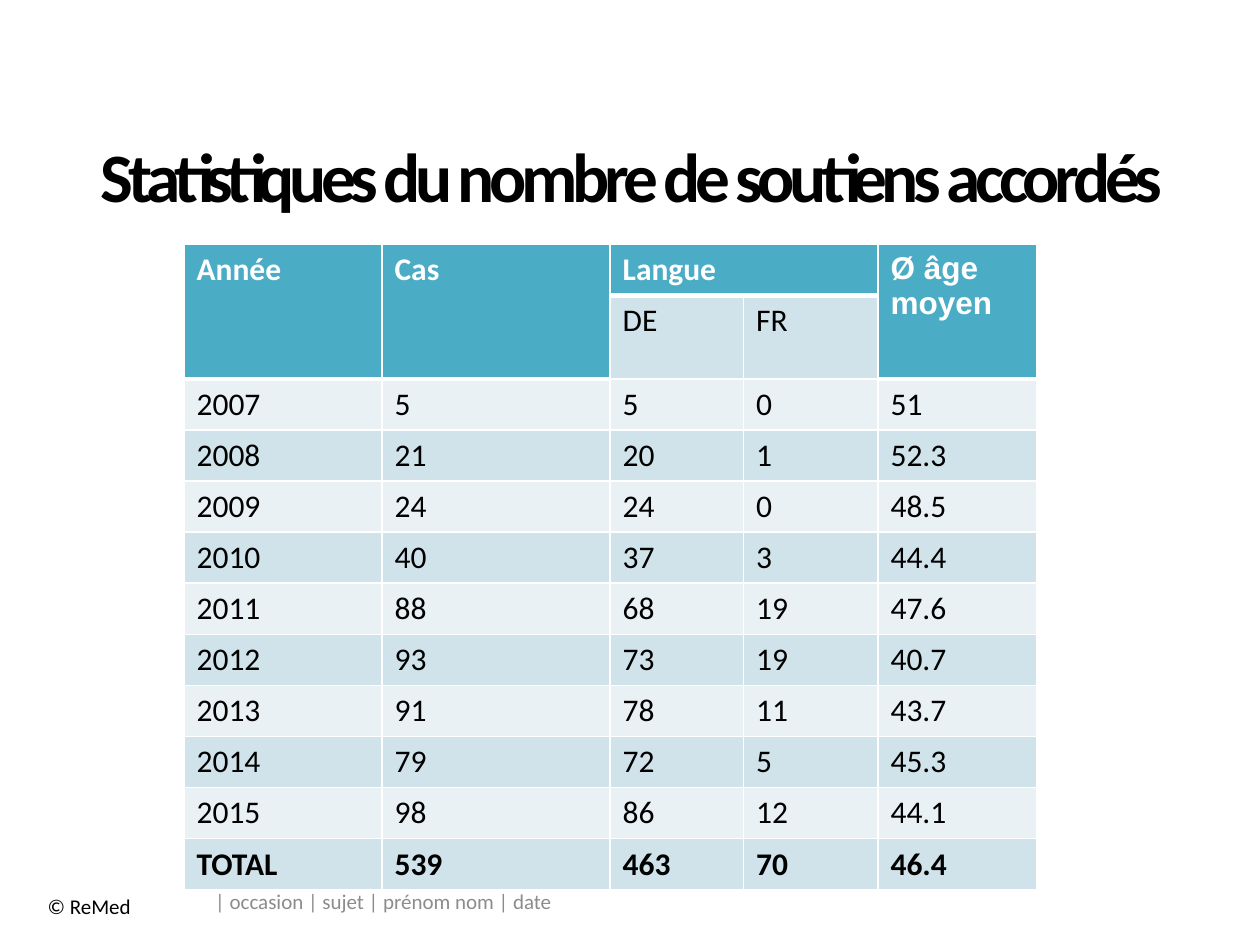
"""Builds the slide with yearly support statistics."""
from lxml.etree import SubElement
from pptx import Presentation
from pptx.dml.color import RGBColor
from pptx.enum.text import MSO_ANCHOR, MSO_AUTO_SIZE, PP_ALIGN
from pptx.oxml.ns import qn
from pptx.util import Cm, Pt

BLACK = RGBColor(0x00, 0x00, 0x00)
WHITE = RGBColor(0xFF, 0xFF, 0xFF)
GREY = RGBColor(0x8C, 0x8C, 0x8C)
TEAL = RGBColor(0x4B, 0xAC, 0xC6)
DARK = RGBColor(0xD0, 0xE3, 0xEA)
LIGHT = RGBColor(0xE9, 0xF1, 0xF5)

WIDTHS = (3.99, 4.6, 2.69, 2.71, 3.2)
HEIGHT = 1.03
ROWS = (
    ("Année", "Cas", "Langue", "", "Ø âge moyen"),
    ("", "", "DE", "FR", ""),
    ("2007", "5", "5", "0", "51"),
    ("2008", "21", "20", "1", "52.3"),
    ("2009", "24", "24", "0", "48.5"),
    ("2010", "40", "37", "3", "44.4"),
    ("2011", "88", "68", "19", "47.6"),
    ("2012", "93", "73", "19", "40.7"),
    ("2013", "91", "78", "11", "43.7"),
    ("2014", "79", "72", "5", "45.3"),
    ("2015", "98", "86", "12", "44.1"),
    ("TOTAL", "539", "463", "70", "46.4"),
)
MERGES = ((0, 0, 1, 0), (0, 1, 1, 1), (0, 2, 0, 3), (0, 4, 1, 4))


class Deck:
    """Holds the style and the current slide."""

    base = {"name": "Calibri", "size": Pt(18), "bold": False}

    def __init__(self):
        self.prs = Presentation()
        self.prs.slide_width, self.prs.slide_height = Cm(25.4), Cm(19.05)
        self.slide = self.prs.slides.add_slide(self.prs.slide_layouts[5])

    def put(self, frame, text, color=BLACK, **style):
        """Puts one formatted run into a text frame."""
        run = frame.paragraphs[0].add_run()
        run.text = text
        for key, value in {**self.base, **style}.items():
            setattr(run.font, key, value)
        run.font.color.rgb = color
        return run

    def title(self, text, box):
        """Fills and places the title placeholder."""
        shape = self.slide.shapes.title
        for key, value in zip(("left", "top", "width", "height"), box):
            setattr(shape, key, Cm(value))
        frame = shape.text_frame
        frame.auto_size = MSO_AUTO_SIZE.NONE
        frame.vertical_anchor = MSO_ANCHOR.MIDDLE
        run = self.put(frame, text, size=Pt(39.6), bold=True)
        run._r.get_or_add_rPr().set("spc", "-300")
        frame.paragraphs[0].alignment = PP_ALIGN.CENTER

    def label(self, text, box, color, anchor):
        """Adds a small line of text."""
        frame = self.slide.shapes.add_textbox(*map(Cm, box)).text_frame
        frame.word_wrap = True
        frame.vertical_anchor = anchor
        self.put(frame, text, color, size=Pt(12))

    def edges(self, cell, head):
        """Draws white cell borders, with a thick one below a header."""
        props = cell._tc.get_or_add_tcPr()
        for side in "LRTB":
            width = Pt(3 if head and side == "B" else 1)
            line = SubElement(props, qn(f"a:ln{side}"), w=str(width))
            fill = SubElement(line, qn("a:solidFill"))
            SubElement(fill, qn("a:srgbClr"), val=str(WHITE))

    def table(self, rows, left, top):
        """Adds the table with its merged header and banded rows."""
        grid = self.slide.shapes.add_table(
            len(rows), len(WIDTHS), Cm(left), Cm(top),
            Cm(sum(WIDTHS)), Cm(HEIGHT * len(rows))).table
        for col, width in zip(grid.columns, WIDTHS):
            col.width = Cm(width)
        for row in grid.rows:
            row.height = Cm(HEIGHT)
        for r1, c1, r2, c2 in MERGES:
            grid.cell(r1, c1).merge(grid.cell(r2, c2))
        for r, row in enumerate(rows):
            for c, text in enumerate(row):
                cell = grid.cell(r, c)
                head = r == 0 or (r == 1 and cell.is_spanned)
                self.edges(cell, head)
                cell.fill.solid()
                band = DARK if r % 2 else LIGHT
                cell.fill.fore_color.rgb = TEAL if head else band
                if text:
                    self.put(cell.text_frame, text,
                             WHITE if head else BLACK,
                             bold=head or r == len(rows) - 1,
                             name="Arial" if "Ø" in text else "Calibri")


def main():
    deck = Deck()
    deck.title("Statistiques du nombre de soutiens accordés",
               (1.3, 2.72, 22.86, 1.6))
    deck.table(ROWS, 3.71, 4.93)
    deck.label("| occasion | sujet | prénom nom | date",
               (4.09, 17.65, 12.62, 1.02), GREY, MSO_ANCHOR.MIDDLE)
    deck.label("© ReMed", (0.71, 17.88, 3.4, 0.76), BLACK, MSO_ANCHOR.TOP)
    deck.prs.save("out.pptx")


if __name__ == "__main__":
    main()
